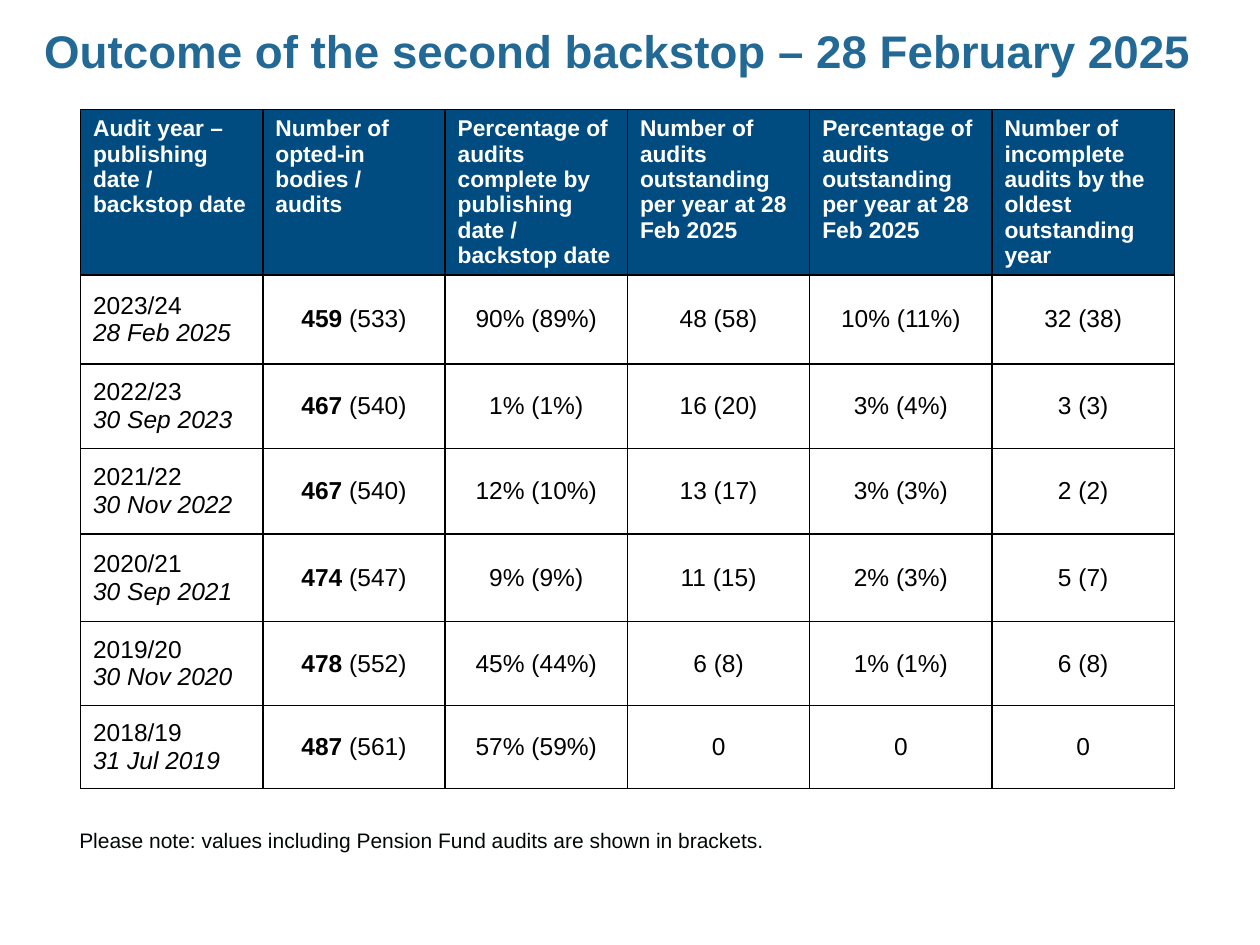
"""Build the audit backstop outcome slide."""
from lxml import etree
from pptx import Presentation
from pptx import util as u
from pptx.dml.color import RGBColor
from pptx.enum import text
from pptx.oxml import ns

Pt = u.Pt
TITLE_BLUE = RGBColor(0x23, 0x69, 0x95)
HEADER_BLUE = RGBColor(0x00, 0x4C, 0x80)
WHITE = RGBColor(0xFF, 0xFF, 0xFF)
BLACK = RGBColor(0x00, 0x00, 0x00)
NOTE_BLACK = RGBColor(0x00, 0x08, 0x07)

HEADERS = [
    "Audit year –\npublishing date / backstop date",
    "Number of opted-in bodies / audits",
    "Percentage of audits complete by publishing date / backstop date",
    "Number of audits outstanding per year at 28 Feb 2025",
    "Percentage of audits outstanding per year at 28 Feb 2025",
    "Number of incomplete audits by the oldest outstanding year",
]
AUDIT_YEARS = [
    ("2023/24", "28 Feb 2025", "459", "(533)", "90% (89%)", "48 (58)", "10% (11%)", "32 (38)"),
    ("2022/23", "30 Sep 2023", "467", "(540)", "1% (1%)", "16 (20)", "3% (4%)", "3 (3)"),
    ("2021/22", "30 Nov 2022", "467", "(540)", "12% (10%)", "13 (17)", "3% (3%)", "2 (2)"),
    ("2020/21", "30 Sep 2021", "474", "(547)", "9% (9%)", "11 (15)", "2% (3%)", "5 (7)"),
    ("2019/20", "30 Nov 2020", "478", "(552)", "45% (44%)", "6 (8)", "1% (1%)", "6 (8)"),
    ("2018/19", "31 Jul 2019", "487", "(561)", "57% (59%)", "0", "0", "0"),
]
ROW_HEIGHTS = [94.3, 51, 48.2, 49, 50, 48, 47.5]
COLUMN_WIDTH = 104.2


class Deck:
    def __init__(self, font="Arial"):
        self.font = font
        self.prs = Presentation()
        self.prs.slide_width, self.prs.slide_height = Pt(720), Pt(540)
        self.s = self.prs.slides.add_slide(self.prs.slide_layouts[5])

    def run(self, p, words, size, color, bold=False, italic=False):
        for i, line in enumerate(words.split("\n")):
            if i:
                p.add_line_break()
            if line:
                r = p.add_run()
                r.text = line
                r.font.name, r.font.size = self.font, Pt(size)
                r.font.bold, r.font.italic = bold, italic
                r.font.color.rgb = color

    def title(self, words, left, top, width, height):
        sp = self.s.shapes.title
        sp.left, sp.top, sp.width, sp.height = Pt(left), Pt(top), Pt(width), Pt(height)
        tf = sp.text_frame
        tf.auto_size = text.MSO_AUTO_SIZE.NONE
        tf.vertical_anchor = text.MSO_ANCHOR.MIDDLE
        tf.margin_top, tf.margin_bottom = Pt(0), Pt(5.4)
        p = tf.paragraphs[0]
        p.alignment = text.PP_ALIGN.LEFT
        self.run(p, words, 26.1, TITLE_BLUE, bold=True)

    def note(self, words, left, top, width, height):
        sp = self.s.shapes.add_textbox(Pt(left), Pt(top), Pt(width), Pt(height))
        tf = sp.text_frame
        tf.word_wrap = True
        tf.auto_size = text.MSO_AUTO_SIZE.SHAPE_TO_FIT_TEXT
        self.run(tf.paragraphs[0], words, 12, NOTE_BLACK)

    def table(self, left, top, column_width, row_heights, columns):
        sp = self.s.shapes.add_table(
            len(row_heights), columns, Pt(left), Pt(top),
            Pt(column_width * columns), Pt(sum(row_heights)))
        table = sp.table
        table.first_row = table.horz_banding = False
        for column in table.columns:
            column.width = Pt(column_width)
        for row, height in zip(table.rows, row_heights):
            row.height = Pt(height)
        return table

    def cell(self, cell, runs, size, color, fill=None, centred=False):
        self.borders(cell)
        if fill is None:
            cell.fill.background()
            cell.vertical_anchor = text.MSO_ANCHOR.MIDDLE
        else:
            cell.fill.solid()
            cell.fill.fore_color.rgb = fill
        p = cell.text_frame.paragraphs[0]
        p.alignment = text.PP_ALIGN.CENTER if centred else text.PP_ALIGN.LEFT
        for words, style in runs:
            self.run(p, words, size, color, **style)

    def borders(self, cell):
        tc_pr = cell._tc.get_or_add_tcPr()
        for side in ("lnL", "lnR", "lnT", "lnB"):
            ln = etree.SubElement(tc_pr, ns.qn(f"a:{side}"), w=str(Pt(1)))
            fill = etree.SubElement(ln, ns.qn("a:solidFill"))
            etree.SubElement(fill, ns.qn("a:srgbClr"), val=str(BLACK))


def main():
    deck = Deck()
    deck.title("Outcome of the second backstop – 28 February 2025", 18, 13, 716.4, 36.7)
    table = deck.table(46, 62.7, COLUMN_WIDTH, ROW_HEIGHTS, len(HEADERS))
    for c, words in enumerate(HEADERS):
        deck.cell(table.cell(0, c), [(words, {"bold": True})], 13, WHITE, HEADER_BLUE)
    for r, (year, date, bodies, with_pensions, *values) in enumerate(AUDIT_YEARS, 1):
        cells = [
            [(year + "\n", {}), (date, {"italic": True})],
            [(bodies, {"bold": True}), (" " + with_pensions, {})],
            *([(value, {})] for value in values),
        ]
        for c, runs in enumerate(cells):
            deck.cell(table.cell(r, c), runs, 14, BLACK, centred=c > 0)
    deck.note("Please note: values including Pension Fund audits are shown in brackets.",
              38.2, 469.4, 470, 21.6)
    deck.prs.save("out.pptx")


if __name__ == "__main__":
    main()
